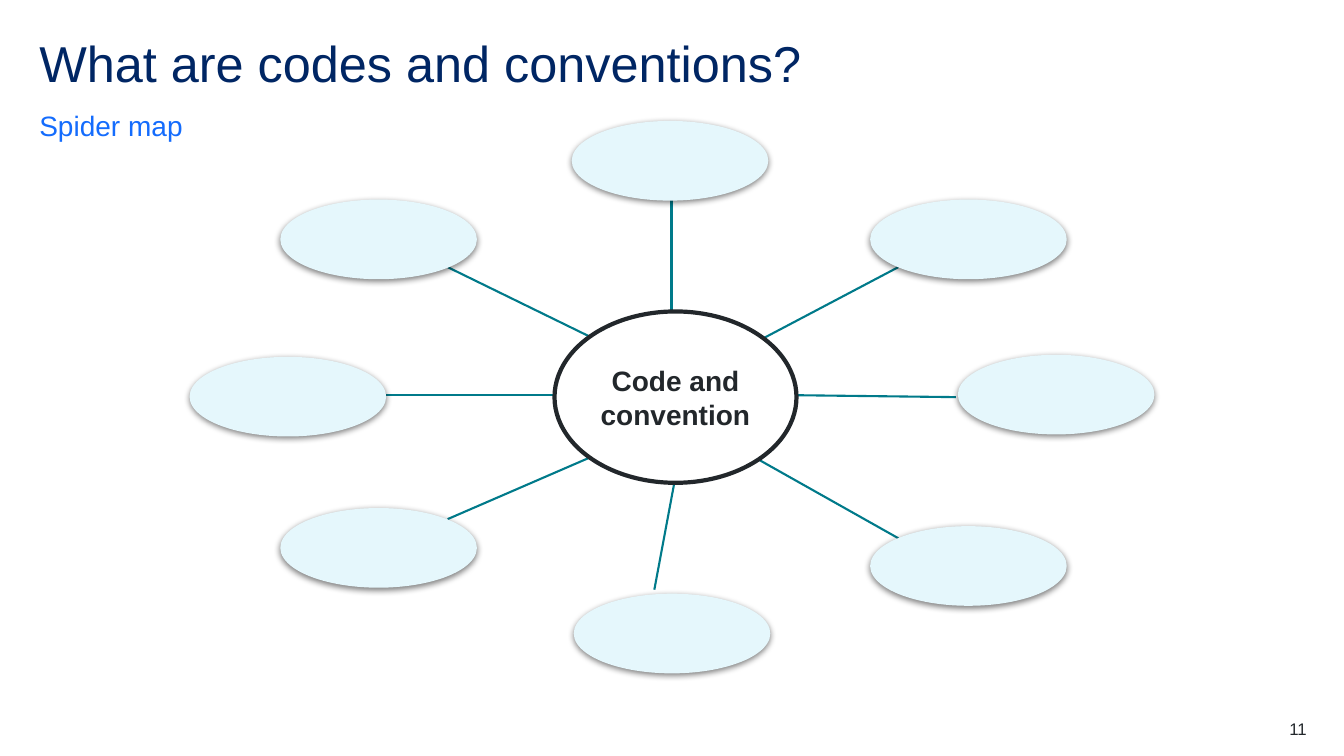
"""Build a spider map slide with eight blank topics around one central idea."""
from lxml import etree
from pptx import Presentation
from pptx.dml.color import RGBColor
from pptx.enum.shapes import MSO_CONNECTOR, MSO_SHAPE
from pptx.enum.text import MSO_ANCHOR as ANCHOR, PP_ALIGN as ALIGN
from pptx.oxml import parse_xml
from pptx.oxml.ns import nsdecls, qn
from pptx.util import Inches, Pt

NAVY = RGBColor(0x00, 0x26, 0x64)
BLUE = RGBColor(0x14, 0x6C, 0xFD)
TEAL = RGBColor(0x00, 0x7A, 0x8A)
PALE = RGBColor(0xE5, 0xF7, 0xFC)
INK = RGBColor(0x22, 0x27, 0x2B)
WHITE = RGBColor(0xFF, 0xFF, 0xFF)

SHADOW = (
    f'<a:effectLst {nsdecls("a")}><a:outerShdw blurRad="{Pt(4.5)}" dist="{Pt(1.5)}" '
    'dir="5400000" algn="t" rotWithShape="0"><a:srgbClr val="000000">'
    '<a:alpha val="50000"/></a:srgbClr></a:outerShdw></a:effectLst>'
)


def cells(*counts):
    """Turn counts of tenth-inch grid cells into lengths."""
    return [Inches(count / 10) for count in counts]


def write(holder, words, size, color, align=ALIGN.LEFT, anchor=ANCHOR.TOP, inset=(0, 0), bold=False):
    """Put one formatted run into a shape and return its paragraph."""
    frame = holder.text_frame
    frame.word_wrap = True
    frame.vertical_anchor = anchor
    frame.margin_left = frame.margin_right = Inches(inset[0])
    frame.margin_top = frame.margin_bottom = Inches(inset[1])
    paragraph = frame.paragraphs[0]
    paragraph.alignment = align
    run = paragraph.add_run()
    run.text = words
    run.font.name = "Arial"
    run.font.size = Pt(size)
    run.font.bold = bold
    run.font.color.rgb = color
    return paragraph


deck = Presentation()
deck.slide_width, deck.slide_height = Inches(13.33), Inches(7.5)
slide = deck.slides.add_slide(deck.slide_layouts[5])
shapes = slide.shapes

heading = shapes.title
heading.left, heading.top, heading.width, heading.height = cells(3.9, 3.9, 125.6, 6)
write(heading, "What are codes and conventions?", 36, NAVY).line_spacing = 0.9

subtitle = shapes.add_textbox(*cells(3.9, 10.7, 125.6, 3.4))
subtitle_line = write(subtitle, "Spider map", 20, BLUE, anchor=ANCHOR.BOTTOM)
subtitle_line.line_spacing = 1.5
subtitle_line.space_after = Pt(12)

# Each branch: topic corner, then spoke start and end
branches = [
    ((56.7, 12.0), (66.6, 19.8, 66.6, 31.3)),
    ((86.3, 19.8), (74.5, 34.2, 89.1, 26.5)),
    ((95.0, 35.2), (78.1, 39.2, 94.8, 39.4)),
    ((86.3, 52.2), (74.0, 44.9, 89.1, 53.4)),
    ((56.9, 58.9), (66.9, 47.8, 64.9, 58.5)),
    ((27.8, 50.4), (59.4, 45.0, 44.4, 51.5)),
    ((18.8, 35.4), (38.3, 39.2, 56.6, 39.2)),
    ((27.8, 19.8), (58.5, 33.4, 44.4, 26.5)),
]
for corner, ends in branches:
    spoke = shapes.add_connector(MSO_CONNECTOR.STRAIGHT, *cells(*ends))
    spoke.line.color.rgb = TEAL
    spoke.line.width = Pt(1.5)
    etree.SubElement(spoke._element.spPr, qn("a:effectLst"))

    topic = shapes.add_shape(MSO_SHAPE.OVAL, *cells(*corner, 19.5, 7.9))
    topic.fill.solid()
    topic.fill.fore_color.rgb = PALE
    topic.line.fill.background()
    topic._element.spPr.append(parse_xml(SHADOW))

page_number = shapes.add_textbox(*cells(121.7, 71.3, 7.9, 2))
write(page_number, "11", 12, INK, align=ALIGN.RIGHT)

hub = shapes.add_shape(MSO_SHAPE.OVAL, *cells(55, 30.9, 24, 17))
hub.shadow.inherit = False
hub.fill.solid()
hub.fill.fore_color.rgb = WHITE
hub.line.color.rgb = INK
hub.line.width = Pt(3)
write(hub, "Code and convention", 20, INK, ALIGN.CENTER, ANCHOR.MIDDLE, (0.09, 0.04), True)

deck.save("out.pptx")
